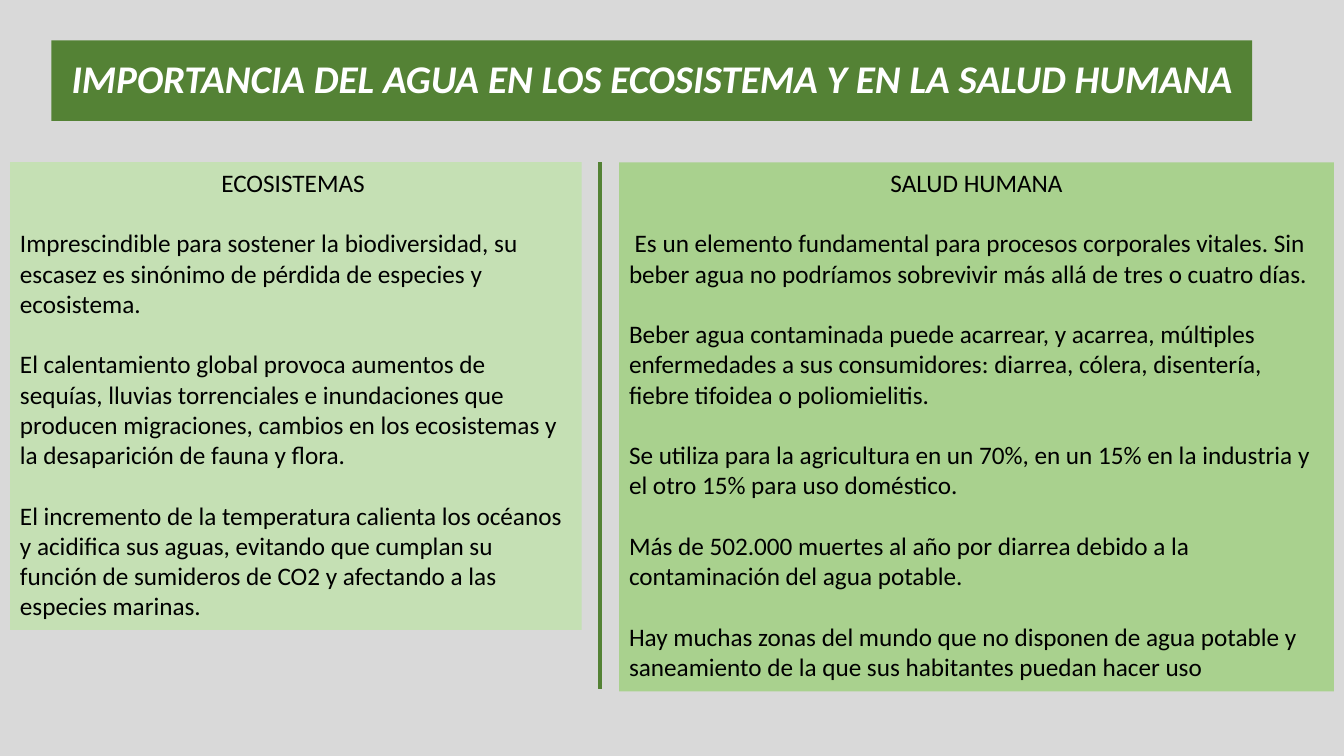
import pptx
import pptx.dml.color
import pptx.enum.shapes
import pptx.enum.text
import pptx.oxml.ns
import pptx.util
from lxml import etree

Inches = pptx.util.Inches
Pt = pptx.util.Pt
CENTER = pptx.enum.text.PP_ALIGN.CENTER
DARK_GREEN = "548235"
COLUMNS_TOP = 1.61

ECOSYSTEMS = [
    "Imprescindible para sostener la biodiversidad, su escasez es sinónimo de pérdida de especies y ecosistema.",
    "El calentamiento global provoca aumentos de sequías, lluvias torrenciales e inundaciones que producen "
    "migraciones, cambios en los ecosistemas y la desaparición de fauna y flora.",
    "El incremento de la temperatura calienta los océanos y acidifica sus aguas, evitando que cumplan su "
    "función de sumideros de CO2 y afectando a las especies marinas.",
]
HEALTH = [
    " Es un elemento fundamental para procesos corporales vitales. Sin beber agua no podríamos sobrevivir "
    "más allá de tres o cuatro días.",
    "Beber agua contaminada puede acarrear, y acarrea, múltiples enfermedades a sus consumidores: diarrea, "
    "cólera, disentería, fiebre tifoidea o poliomielitis.",
    "Se utiliza para la agricultura en un 70%, en un 15% en la industria y el otro 15% para uso doméstico.",
    "Más de 502.000 muertes al año por diarrea debido a la contaminación del agua potable.",
    "Hay muchas zonas del mundo que no disponen de agua potable y saneamiento de la que sus habitantes "
    "puedan hacer uso",
]


def color(value):
    return pptx.dml.color.RGBColor.from_string(value)


def add_panel(slide, box, fill):
    panel = slide.shapes.add_textbox(*map(Inches, box))
    panel.fill.solid()
    panel.fill.fore_color.rgb = color(fill)
    panel.text_frame.word_wrap = True
    return panel.text_frame


def add_text(paragraph, text, size, text_color):
    run = paragraph.add_run()
    run.text = text
    run.font.name = "Calibri"
    run.font.size = Pt(size)
    run.font.color.rgb = color(text_color)
    return run


def add_title(slide, box, text):
    frame = add_panel(slide, box, DARK_GREEN)
    frame.vertical_anchor = pptx.enum.text.MSO_ANCHOR.MIDDLE
    heading = frame.paragraphs[0]
    heading.alignment = CENTER
    heading.line_spacing = 0.9
    run = add_text(heading, text, 28, "FFFFFF")
    run.font.bold = True
    run.font.italic = True


def add_column(slide, box, fill, heading_text, points):
    frame = add_panel(slide, box, fill)
    frame.auto_size = pptx.enum.text.MSO_AUTO_SIZE.SHAPE_TO_FIT_TEXT
    heading = frame.paragraphs[0]
    heading.alignment = CENTER
    add_text(heading, heading_text, 18, "000000")
    for point in points:
        paragraph = frame.add_paragraph()
        paragraph.space_before = Pt(21.6)
        add_text(paragraph, point, 18, "000000")


def add_divider(slide, x, top, height):
    divider = slide.shapes.add_connector(
        pptx.enum.shapes.MSO_CONNECTOR.STRAIGHT,
        Inches(x), Inches(top), Inches(x), Inches(top + height))
    divider.line.color.rgb = color(DARK_GREEN)
    divider.line.width = Pt(3)
    etree.SubElement(divider._element.spPr, pptx.oxml.ns.qn("a:effectLst"))


def main():
    deck = pptx.Presentation()
    deck.slide_width = Inches(13.33)
    deck.slide_height = Inches(7.5)
    slide = deck.slides.add_slide(deck.slide_layouts[6])
    slide.background.fill.solid()
    slide.background.fill.fore_color.rgb = color("D9D9D9")

    add_title(slide, (0.51, 0.4, 11.91, 0.8),
              "IMPORTANCIA DEL AGUA EN LOS ECOSISTEMA Y EN LA SALUD HUMANA")
    add_divider(slide, 5.95, COLUMNS_TOP, 5.23)
    add_column(slide, (0.1, COLUMNS_TOP, 5.67, 4.64), "C5E0B4", "ECOSISTEMAS ", ECOSYSTEMS)
    add_column(slide, (6.14, COLUMNS_TOP, 7.09, 5.25), "A9D18E", "SALUD HUMANA", HEALTH)
    deck.save("out.pptx")


if __name__ == "__main__":
    main()
